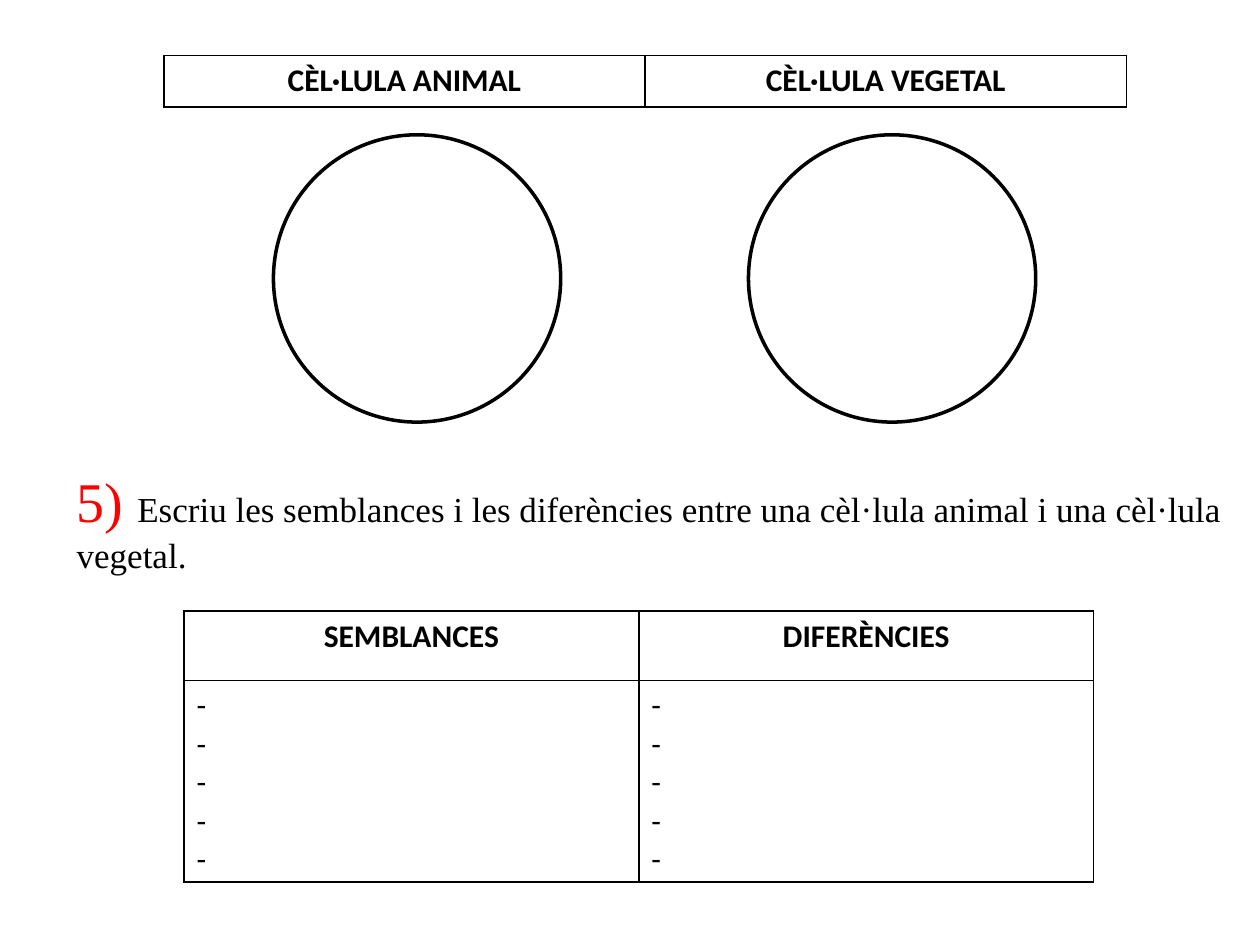
import pptx
import pptx.dml.color
import pptx.enum.shapes
import pptx.enum.text
import pptx.oxml
import pptx.oxml.ns
import pptx.util
from pptx.util import Inches

BLACK, WHITE, RED = "000000", "FFFFFF", "FF0000"
CENTER = pptx.enum.text.PP_ALIGN.CENTER
LEFT = pptx.enum.text.PP_ALIGN.LEFT


def color(hex_string):
    return pptx.dml.color.RGBColor.from_string(hex_string)


def add_text(paragraph, text, size=18, font="Calibri", fill=BLACK, bold=False, align=LEFT):
    paragraph.alignment = align
    run = paragraph.add_run()
    run.text = text
    run.font.size = pptx.util.Pt(size)
    run.font.name = font
    run.font.bold = bold
    run.font.color.rgb = color(fill)


def set_borders(cell, width=1):
    properties = cell._tc.get_or_add_tcPr()
    for position, side in enumerate(("lnL", "lnR", "lnT", "lnB")):
        border = pptx.oxml.parse_xml(
            f'<a:{side} {pptx.oxml.ns.nsdecls("a")} w="{pptx.util.Pt(width)}">'
            f'<a:solidFill><a:srgbClr val="{BLACK}"/></a:solidFill></a:{side}>')
        properties.insert(position, border)


def add_grid(slide, left, top, width, row_heights, rows):
    """Bordered table with bold centred headings; each cell is a list of lines."""
    table = slide.shapes.add_table(
        len(rows), len(rows[0]), left, top, width, sum(row_heights)).table
    for row, height in zip(table.rows, row_heights):
        row.height = height
    for row_index, row in enumerate(rows):
        heading = row_index == 0
        for column_index, lines in enumerate(row):
            cell = table.cell(row_index, column_index)
            cell.fill.solid()
            cell.fill.fore_color.rgb = color(WHITE)
            set_borders(cell)
            frame = cell.text_frame
            for line_index, line in enumerate(lines):
                paragraph = frame.add_paragraph() if line_index else frame.paragraphs[0]
                add_text(paragraph, line, bold=heading, align=CENTER if heading else LEFT)


def add_cell_outlines(slide, left, top, diameter, pitch):
    for index in range(2):
        circle = slide.shapes.add_shape(
            pptx.enum.shapes.MSO_SHAPE.OVAL, left + index * pitch, top, diameter, diameter)
        circle.shadow.inherit = False
        circle.fill.solid()
        circle.fill.fore_color.rgb = color(WHITE)
        circle.line.color.rgb = color(BLACK)
        circle.line.width = pptx.util.Pt(2)


def add_question(slide, left, top, width, height):
    frame = slide.shapes.add_textbox(left, top, width, height).text_frame
    frame.word_wrap = True
    frame.margin_top = Inches(0.61)
    paragraph = frame.paragraphs[0]
    add_text(paragraph, "5) ", size=32, font="Times New Roman", fill=RED)
    add_text(paragraph, "Escriu les semblances i les diferències entre una cèl·lula animal "
             "i una cèl·lula vegetal.", size=20, font="Times New Roman")


def main():
    presentation = pptx.Presentation()
    presentation.slide_width = Inches(10)
    presentation.slide_height = Inches(7.5)
    slide = presentation.slides.add_slide(presentation.slide_layouts[6])

    add_grid(slide, Inches(1.3), Inches(0.44), Inches(7.64), [Inches(0.41)],
             [[["CÈL·LULA ANIMAL"], ["CÈL·LULA VEGETAL"]]])
    add_cell_outlines(slide, Inches(2.17), Inches(1.07), Inches(2.28), Inches(3.77))
    add_question(slide, Inches(0.51), Inches(3.09), Inches(9.49), Inches(4.41))
    add_grid(slide, Inches(1.46), Inches(4.85), Inches(7.22), [Inches(0.55), Inches(1.6)],
             [[["SEMBLANCES"], ["DIFERÈNCIES"]], [["-"] * 5] * 2])

    presentation.save("out.pptx")


if __name__ == "__main__":
    main()
